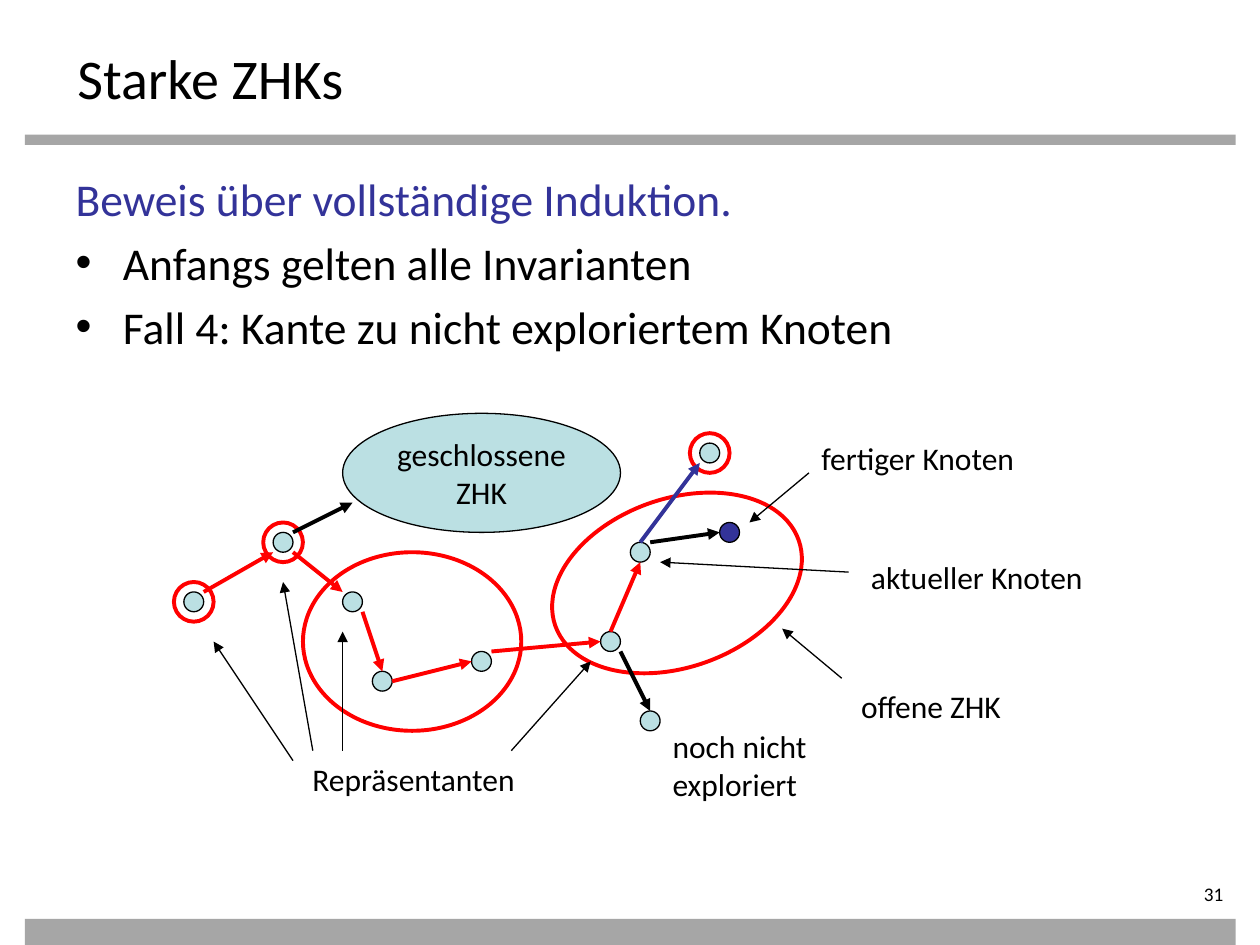
import pptx
import pptx.util
import pptx.dml.color
import pptx.enum.shapes
import pptx.enum.text
import pptx.oxml.ns
from lxml import etree

Pt = pptx.util.Pt
SHAPES = pptx.enum.shapes.MSO_SHAPE
ALIGN = pptx.enum.text.PP_ALIGN
ANCHOR = pptx.enum.text.MSO_ANCHOR
FIT = pptx.enum.text.MSO_AUTO_SIZE
qn = pptx.oxml.ns.qn

COLORS = {
    "text": "000000",
    "accent": "333399",
    "bar": "A6A6A6",
    "node": "BBE0E3",
    "path": "FF0000",
}
FONT = "Calibri"
GRID = 5.67
THIN, THICK = 0.75, 2.25


def rgb(name):
    return pptx.dml.color.RGBColor.from_string(COLORS[name])


def write(paragraph, text, size=18, color="text", align=ALIGN.LEFT):
    paragraph.text = text
    paragraph.alignment = align
    for run in paragraph.runs:
        run.font.name = FONT
        run.font.size = Pt(size)
        run.font.color.rgb = rgb(color)


def place(shape, left, top, width, height):
    shape.left, shape.top = Pt(left), Pt(top)
    shape.width, shape.height = Pt(width), Pt(height)


def add_shape(slide, kind, box, fill=None, line=None, weight=THIN):
    shape = slide.shapes.add_shape(kind, *map(Pt, box))
    shape.shadow.inherit = False
    if fill:
        shape.fill.solid()
        shape.fill.fore_color.rgb = rgb(fill)
    else:
        shape.fill.background()
    if line:
        shape.line.color.rgb = rgb(line)
        shape.line.width = Pt(weight)
    else:
        shape.line.fill.background()
    return shape


def add_arrow(slide, start, end, color, weight):
    arrow = slide.shapes.add_connector(
        pptx.enum.shapes.MSO_CONNECTOR.STRAIGHT, *map(Pt, (*start, *end)))
    arrow.line.color.rgb = rgb(color)
    arrow.line.width = Pt(weight)
    etree.SubElement(arrow.line._get_or_add_ln(), qn("a:tailEnd"), type="triangle")
    etree.SubElement(arrow._element.spPr, qn("a:effectLst"))


def add_label(slide, text, left, top, width, height):
    label = slide.shapes.add_textbox(*map(Pt, (left, top, width, height)))
    frame = label.text_frame
    frame.word_wrap = False
    frame.auto_size = FIT.SHAPE_TO_FIT_TEXT
    write(frame.paragraphs[0], text)


def add_frame(slide, left, top, width, height):
    add_shape(slide, SHAPES.RECTANGLE, (left, top + 77, width, 5.8), "bar")
    add_shape(slide, SHAPES.RECTANGLE, (left, top + height - 15, width, 15), "bar")
    number = slide.shapes.add_textbox(
        *map(Pt, (left + width - 79.2, top + 504, 79.2, 16)))
    frame = number.text_frame
    frame.margin_left = frame.margin_top = frame.margin_bottom = 0
    frame.margin_right = Pt(7.2)
    frame.word_wrap = True
    write(frame.paragraphs[0], "31", size=11, align=ALIGN.RIGHT)


def add_title(slide, left, top, width, height):
    title = slide.shapes.title
    place(title, left, top, width, height)
    title.text_frame.vertical_anchor = ANCHOR.TOP
    title.text_frame.auto_size = FIT.NONE
    write(title.text_frame.paragraphs[0], "Starke ZHKs", size=32)


def add_body(slide, left, top, width, height):
    body = slide.placeholders[1]
    place(body, left, top, width, height)
    frame = body.text_frame
    frame.auto_size = FIT.NONE
    items = [
        ("Beweis über vollständige Induktion.", "accent", False),
        ("Anfangs gelten alle Invarianten", "text", True),
        ("Fall 4: Kante zu nicht exploriertem Knoten", "text", True),
    ]
    for index, (text, color, bulleted) in enumerate(items):
        paragraph = frame.add_paragraph() if index else frame.paragraphs[0]
        properties = paragraph._p.get_or_add_pPr()
        properties.set("marL", str(Pt(27)))
        properties.set("indent", str(-Pt(27)))
        if bulleted:
            etree.SubElement(properties, qn("a:buFont"), typeface="Arial")
            etree.SubElement(properties, qn("a:buChar"), char="•")
        else:
            etree.SubElement(properties, qn("a:buNone"))
        paragraph.space_before = Pt(5.2 if index else 0)
        write(paragraph, text, size=26, color=color)


def add_graph(slide, left, top):
    def point(column, row):
        return left + column * GRID, top + row * GRID

    def ellipse(column, row, columns, rows, **style):
        box = (*point(column, row), columns * GRID, rows * GRID)
        return add_shape(slide, SHAPES.OVAL, box, **style)

    red = {"line": "path", "weight": THICK}
    root, branch, entry, lower, leaf = (1, 18), (10, 12), (17, 18), (20, 26), (30, 24)
    opened, current, finished, unseen, fresh = (43, 22), (46, 13), (55, 11), (47, 30), (53, 3)

    closed = ellipse(17, 0, 28, 12, fill="node", line="text")
    closed.text_frame.word_wrap = False
    closed.text_frame.vertical_anchor = ANCHOR.MIDDLE
    write(closed.text_frame.paragraphs[0], "geschlossene\nZHK", align=ALIGN.CENTER)

    ellipse(13, 14, 22, 18, **red)
    ellipse(37.7, 8.6, 26, 17, **red).rotation = 340.6
    for column, row in (root, branch, fresh):
        ellipse(column - 1, row - 1, 4, 4, **red)
    for node in (root, branch, entry, lower, leaf, opened, current, finished, unseen, fresh):
        ellipse(*node, 2, 2, fill="accent" if node == finished else "node", line="text")

    arrows = {
        ("path", THICK): [
            ((3, 18), (10, 14)), ((12, 14), (17, 18)), ((19, 20), (21, 26)),
            ((22, 27), (30, 25)), ((32, 24), (43, 23)), ((44, 22), (47, 15)),
        ],
        ("text", THICK): [
            ((12, 12), (18, 9)), ((48, 13), (55, 12)), ((45, 24), (48, 30)),
        ],
        ("accent", THICK): [((47, 13), (53, 5))],
        ("text", THIN): [
            ((12, 35), (4, 23)), ((14, 34), (11, 17)), ((17, 34), (17, 22)),
            ((34, 34), (42, 25)), ((67.3, 26.7), (61.3, 21.7)),
            ((68, 16), (49, 15)), ((64, 6), (58, 11)),
        ],
    }
    for (color, weight), pairs in arrows.items():
        for start, end in pairs:
            add_arrow(slide, point(*start), point(*end), color, weight)

    labels = [
        ("Repräsentanten", 12.7, 34.3, 142.6, 28.8),
        ("offene ZHK", 68, 27, 105.8, 28.8),
        ("aktueller Knoten", 69, 14, 144.7, 28.8),
        ("noch nicht\nexploriert", 49, 31, 96.5, 50.4),
        ("fertiger Knoten", 64, 2, 132.5, 28.8),
    ]
    for text, column, row, width, height in labels:
        add_label(slide, text, *point(column, row), width, height)


def main():
    presentation = pptx.Presentation()
    presentation.slide_width, presentation.slide_height = Pt(720), Pt(540)
    slide = presentation.slides.add_slide(presentation.slide_layouts[1])
    add_frame(slide, 14.2, 0, 692, 540)
    add_title(slide, 37, 21, 648, 39.6)
    add_body(slide, 36, 94.3, 648, 391)
    add_graph(slide, 99.4, 236.2)
    presentation.save("out.pptx")


if __name__ == "__main__":
    main()
